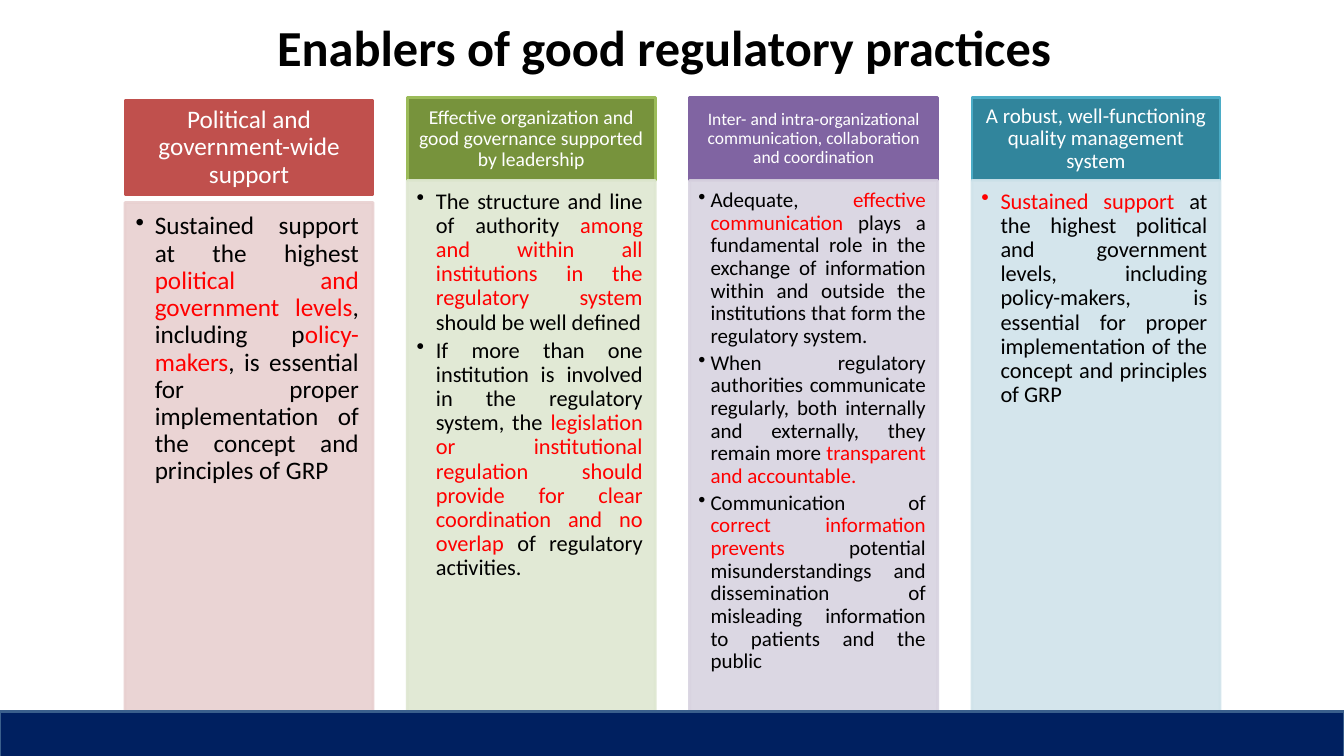
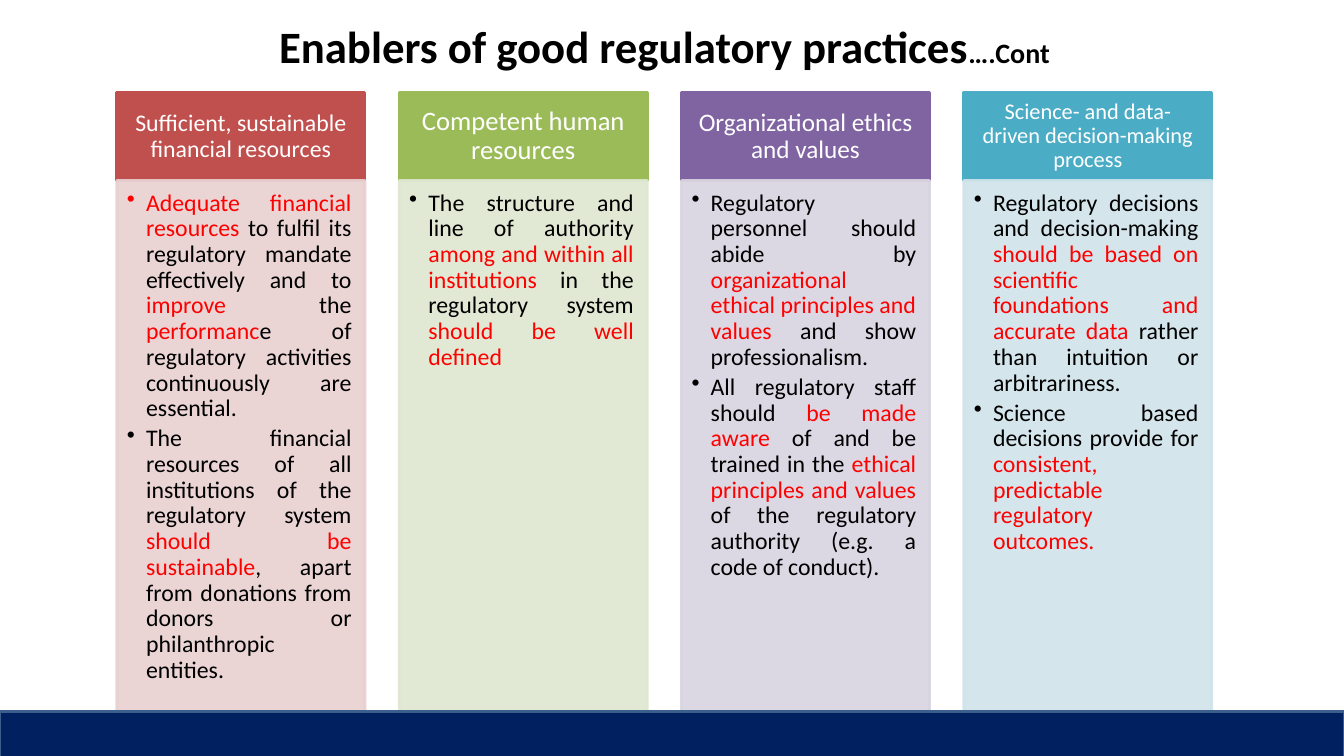
from dataclasses import dataclass

from lxml import etree
from pptx import Presentation
from pptx import util as u
from pptx.dml.color import RGBColor
from pptx.enum import shapes, text
from pptx.oxml import ns

# Shared look
FONT = "Calibri"
BLACK = RGBColor(0x00, 0x00, 0x00)
WHITE = RGBColor(0xFF, 0xFF, 0xFF)
HIGHLIGHT = RGBColor(0xFF, 0x00, 0x00)
NAVY = RGBColor(0x00, 0x20, 0x60)
NAVY_EDGE = RGBColor(0x3A, 0x5F, 0x8C)
RED = RGBColor(0xC0, 0x50, 0x4D)
GREEN = RGBColor(0x9B, 0xBB, 0x59)
DARK_GREEN = RGBColor(0x77, 0x93, 0x3C)
PURPLE = RGBColor(0x80, 0x64, 0xA2)
AQUA = RGBColor(0x4B, 0xAC, 0xC6)
DARK_AQUA = RGBColor(0x31, 0x85, 0x9C)
HEADER_COLORS = (RED, GREEN, PURPLE, AQUA)
BODY_COLORS = (
    RGBColor(0xE8, 0xD0, 0xD0),
    RGBColor(0xDE, 0xE7, 0xD1),
    RGBColor(0xD8, 0xD3, 0xE0),
    RGBColor(0xD0, 0xE3, 0xEA),
)

# Grid, in inches
SLIDE_WIDTH, SLIDE_HEIGHT = 13.33, 7.5
COLUMN_PITCH, COLUMN_WIDTH = 2.8, 2.46
BODY_OPACITY = 90


@dataclass(frozen=True)
class Rows:
    """Top and height of a column's header and body."""
    header_top: float
    header_height: float
    body_top: float
    body_height: float


@dataclass(frozen=True)
class Enabler:
    """One column; words between asterisks are highlighted."""
    heading: str
    heading_size: float
    points: tuple[str, ...]
    point_size: float
    rows: Rows
    header_fill: RGBColor | None = None
    indent: float = 0.19


@dataclass(frozen=True)
class EnablerSlide:
    title_size: float
    left: float
    enablers: tuple[Enabler, ...]
    title_suffix: str = ""


TALL_HEADER = Rows(1, 0.93, 2.01, 5.13)
FIRST_ROWS = Rows(0.97, 0.82, 1.79, 5.39)
SECOND_ROWS = Rows(0.92, 0.87, 1.79, 5.31)
TITLE = "Enablers of good regulatory practices"

SLIDES = (
    EnablerSlide(36, 1.24, (
        Enabler("Political and government-wide support", 18, (
            "Sustained support at the highest *political and government levels*, including "
            "p*olicy-makers*, is essential for proper implementation of the concept and "
            "principles of GRP",
        ), 18, TALL_HEADER),
        Enabler("Effective organization and good governance supported by leadership", 14, (
            "The structure and line of authority *among and within all institutions in the "
            "regulatory system *should be well defined",
            "If more than one institution is involved in the regulatory system, the "
            "*legislation or institutional regulation should provide for clear coordination "
            "and no overlap* of regulatory activities.",
        ), 16, FIRST_ROWS, DARK_GREEN),
        Enabler("Inter- and intra-organizational communication, collaboration and "
                "coordination", 12.5, (
            "Adequate, *effective communication *plays a fundamental role in the exchange of "
            "information within and outside the institutions that form the regulatory system.",
            "When regulatory authorities communicate regularly, both internally and "
            "externally, they remain more *transparent and accountable.*",
            "Communication of *correct information prevents* potential misunderstandings and "
            "dissemination of misleading information to patients and the public",
        ), 15, FIRST_ROWS, indent=0.12),
        Enabler("A robust, well-functioning quality management system", 15, (
            "*Sustained support *at the highest political and government levels, including "
            "policy-makers, is essential for proper implementation of the concept and "
            "principles of GRP",
        ), 16, FIRST_ROWS, DARK_AQUA),
    )),
    EnablerSlide(32, 1.16, (
        Enabler("Sufficient, sustainable financial resources", 17, (
            "*Adequate financial resources *to fulfil its regulatory mandate effectively and "
            "to *improve* the *performanc*e of regulatory activities continuously are "
            "essential.",
            "The financial resources of all institutions of the regulatory system *should be "
            "sustainable*, apart from donations from donors or philanthropic entities.",
        ), 17, SECOND_ROWS),
        Enabler("Competent human resources", 19, (
            "The structure and line of authority *among and within all institutions* in the "
            "regulatory system *should be well defined*",
        ), 17, SECOND_ROWS),
        Enabler("Organizational ethics and values", 18, (
            "Regulatory personnel should abide by *organizational ethical principles and "
            "values *and show professionalism.",
            "All regulatory staff should *be made aware *of and be trained in the *ethical "
            "principles and values *of the regulatory authority (e.g. a code of conduct).",
        ), 17, SECOND_ROWS),
        Enabler("Science- and data-driven decision-making process", 16, (
            "Regulatory decisions and decision-making *should be based on scientific "
            "foundations and accurate data *rather than intuition or arbitrariness.",
            "Science based decisions provide for *consistent, predictable regulatory "
            "outcomes.*",
        ), 17, SECOND_ROWS),
    ), "….Cont"),
)


def add_panel(slide, left: float, top: float, width: float, height: float,
              fill: RGBColor, edge: RGBColor):
    panel = slide.shapes.add_shape(
        shapes.MSO_SHAPE.RECTANGLE, *(u.Inches(v) for v in (left, top, width, height)))
    panel.shadow.inherit = False
    panel.fill.solid()
    panel.fill.fore_color.rgb = fill
    panel.line.color.rgb = edge
    panel.line.width = u.Pt(2)
    return panel


def set_opacity(panel, percent: int) -> None:
    for color in panel._element.spPr.iter(ns.qn("a:srgbClr")):
        etree.SubElement(color, ns.qn("a:alpha"), val=str(percent * 1000))


def set_frame(frame, anchor, size: float, ems: tuple[float, float, float, float]) -> None:
    """Wrap text with left, top, right and bottom insets in ems."""
    frame.word_wrap = True
    frame.vertical_anchor = anchor
    (frame.margin_left, frame.margin_top,
     frame.margin_right, frame.margin_bottom) = (u.Pt(em * size) for em in ems)


def set_paragraph(paragraph, size: float, color: RGBColor, align) -> None:
    paragraph.alignment = align
    paragraph.font.name = FONT
    paragraph.font.size = u.Pt(size)
    paragraph.font.color.rgb = color


def add_bullet(paragraph, indent: float) -> None:
    properties = paragraph._p.get_or_add_pPr()
    properties.set("marL", str(u.Inches(indent)))
    properties.set("indent", str(-u.Inches(indent)))
    bullet = etree.Element(ns.qn("a:buChar"), char="•")
    properties.find(ns.qn("a:defRPr")).addprevious(bullet)


def add_title(slide, content: EnablerSlide) -> None:
    box = slide.shapes.add_textbox(*(u.Inches(v) for v in (1.63, 0.08, 9.92, 0.75)))
    frame = box.text_frame
    frame.word_wrap = True
    frame.vertical_anchor = text.MSO_ANCHOR.MIDDLE
    title = frame.paragraphs[0]
    set_paragraph(title, content.title_size, BLACK, text.PP_ALIGN.CENTER)
    title.font.bold = True
    title.add_run().text = TITLE
    if content.title_suffix:
        suffix = title.add_run()
        suffix.text = content.title_suffix
        suffix.font.size = u.Pt(20)


def add_header(slide, enabler: Enabler, left: float, color: RGBColor) -> None:
    rows, size = enabler.rows, enabler.heading_size
    header = add_panel(slide, left, rows.header_top, COLUMN_WIDTH, rows.header_height,
                       enabler.header_fill or color, color)
    set_frame(header.text_frame, text.MSO_ANCHOR.MIDDLE, size, (0.56, 0.32, 0.56, 0.32))
    heading = header.text_frame.paragraphs[0]
    set_paragraph(heading, size, WHITE, text.PP_ALIGN.CENTER)
    heading.line_spacing = 0.9
    heading.add_run().text = enabler.heading


def add_body(slide, enabler: Enabler, left: float, color: RGBColor) -> None:
    rows, size = enabler.rows, enabler.point_size
    body = add_panel(slide, left, rows.body_top, COLUMN_WIDTH, rows.body_height, color, color)
    set_opacity(body, BODY_OPACITY)
    frame = body.text_frame
    set_frame(frame, text.MSO_ANCHOR.TOP, size, (0.42, 0.42, 0.56, 0.63))
    for number, point in enumerate(enabler.points):
        paragraph = frame.add_paragraph() if number else frame.paragraphs[0]
        set_paragraph(paragraph, size, BLACK, text.PP_ALIGN.JUSTIFY)
        paragraph.line_spacing = 0.9
        paragraph.space_after = u.Pt(0.18 * size)
        add_bullet(paragraph, enabler.indent)
        # Every second part lies between asterisks
        for part, words in enumerate(point.split("*")):
            if words:
                run = paragraph.add_run()
                run.text = words
                if part % 2:
                    run.font.color.rgb = HIGHLIGHT


def add_enabler_slide(deck, content: EnablerSlide) -> None:
    slide = deck.slides.add_slide(deck.slide_layouts[6])
    add_title(slide, content)
    columns = zip(content.enablers, HEADER_COLORS, BODY_COLORS)
    for column, (enabler, header_color, body_color) in enumerate(columns):
        left = content.left + column * COLUMN_PITCH
        add_header(slide, enabler, left, header_color)
        add_body(slide, enabler, left, body_color)
    # Footer band
    add_panel(slide, 0, 7.06, SLIDE_WIDTH, 0.47, NAVY, NAVY_EDGE)


def main() -> None:
    deck = Presentation()
    deck.slide_width = u.Inches(SLIDE_WIDTH)
    deck.slide_height = u.Inches(SLIDE_HEIGHT)
    for content in SLIDES:
        add_enabler_slide(deck, content)
    deck.save("out.pptx")


if __name__ == "__main__":
    main()
